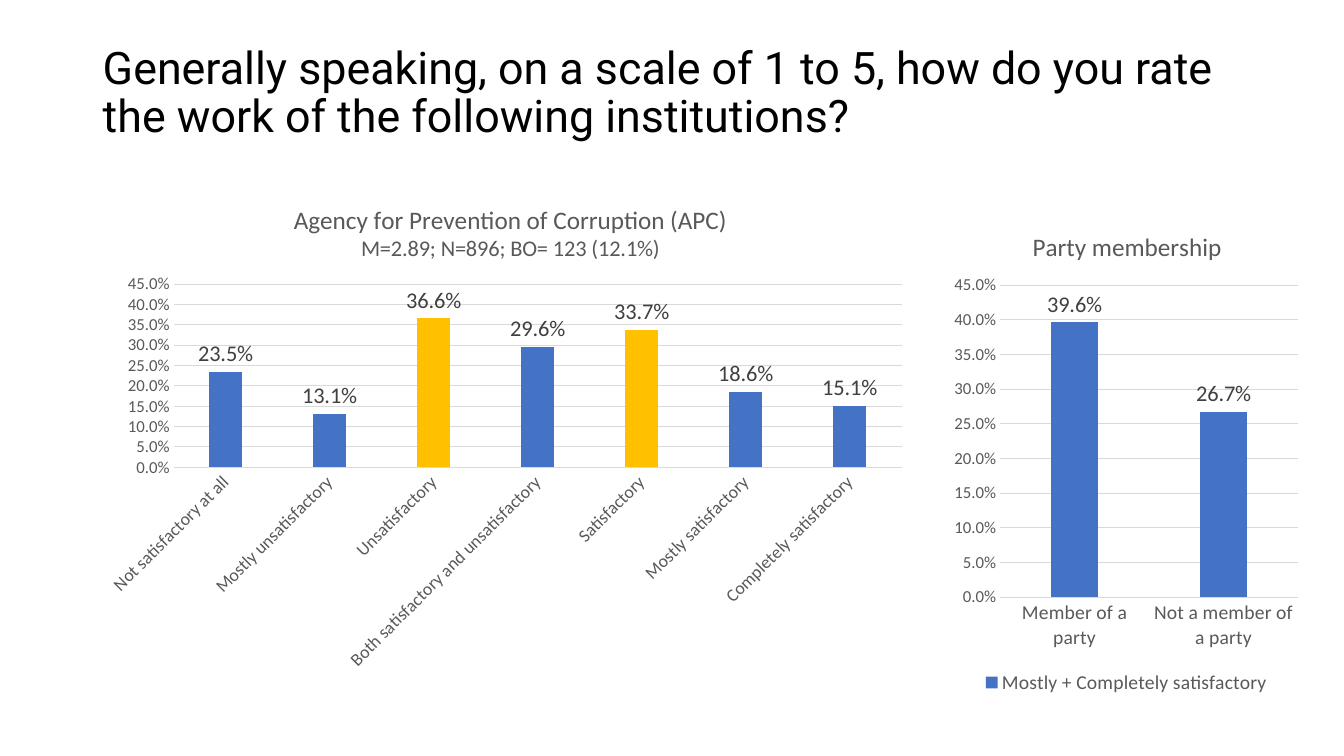
from lxml import etree
from pptx import Presentation
from pptx.chart.data import CategoryChartData
from pptx.dml.color import RGBColor
from pptx.enum.chart import XL_CHART_TYPE, XL_LABEL_POSITION, XL_LEGEND_POSITION, XL_TICK_MARK
from pptx.enum.text import MSO_ANCHOR, MSO_AUTO_SIZE, PP_ALIGN
from pptx.oxml.ns import qn
from pptx.util import Pt

COLUMNS = XL_CHART_TYPE.COLUMN_CLUSTERED
OUTSIDE_END = XL_LABEL_POSITION.OUTSIDE_END
LEGEND_BOTTOM = XL_LEGEND_POSITION.BOTTOM
NO_TICK = XL_TICK_MARK.NONE
LEFT, CENTER = PP_ALIGN.LEFT, PP_ALIGN.CENTER
MIDDLE = MSO_ANCHOR.MIDDLE
NO_AUTOFIT = MSO_AUTO_SIZE.NONE

BLACK = RGBColor(0x00, 0x00, 0x00)
DARK_GRAY = RGBColor(0x40, 0x40, 0x40)
GRAY = RGBColor(0x59, 0x59, 0x59)
LIGHT_GRAY = RGBColor(0xD9, 0xD9, 0xD9)
BLUE = RGBColor(0x44, 0x72, 0xC4)
GOLD = RGBColor(0xFF, 0xC0, 0x00)

QUESTION = ("Generally speaking, on a scale of 1 to 5, how do you rate "
            "the work of the following institutions?")
CHARTS = [
    {
        "title": [("Agency for Prevention of Corruption (APC)", 18),
                  ("M=2.89; N=896; BO= 123 (12.1%)", 16)],
        "series": "Series 1",
        "values": {
            "Not satisfactory at all": 0.235,
            "Mostly unsatisfactory": 0.131,
            "Unsatisfactory": 0.366,
            "Both satisfactory and unsatisfactory": 0.296,
            "Satisfactory": 0.337,
            "Mostly satisfactory": 0.186,
            "Completely satisfactory": 0.151,
        },
        "highlights": ["Unsatisfactory", "Satisfactory"],
        "box": (66.2, 128.9, 589.7, 357.8),
        "title_at": (0.24, 0.04),
        "plot": (0.098, 0.207, 0.882, 0.366),
        "category_size": 12.7,
        "rotation": -45,
        "legend": False,
        "format": "0.0%",
    },
    {
        "title": [("Party membership", 18)],
        "series": "Mostly + Completely satisfactory",
        "values": {"Member of a party": 0.396, "Not a member of a party": 0.267},
        "highlights": [],
        "box": (676.8, 144, 255.6, 355),
        "title_at": (0.225, 0.047),
        "plot": (0.147, 0.168, 0.833, 0.628),
        "category_size": 14,
        "rotation": 0,
        "legend": True,
        "format": "###0.0%",
    },
]


def style_font(font, size, color=GRAY, name="Calibri"):
    font.name = name
    font.size = Pt(size)
    font.bold = False
    font.color.rgb = color


def write_text(paragraph, text, size, color=GRAY, name="Calibri", align=CENTER, spacing=None):
    paragraph.alignment = align
    paragraph.line_spacing = spacing
    run = paragraph.add_run()
    run.text = text
    style_font(run.font, size, color, name)


def place(parent, index, **settings):
    for old in parent.findall(qn("c:layout")):
        parent.remove(old)
    layout = etree.Element(qn("c:layout"))
    manual = etree.SubElement(layout, qn("c:manualLayout"))
    for tag, value in settings.items():
        etree.SubElement(manual, qn(f"c:{tag}")).set("val", str(value))
    parent.insert(index, layout)


def style_axes(chart, content):
    category_axis, value_axis = chart.category_axis, chart.value_axis
    for axis in (category_axis, value_axis):
        axis.major_tick_mark = axis.minor_tick_mark = NO_TICK
    style_font(category_axis.tick_labels.font, content["category_size"])
    category_axis.format.line.color.rgb = LIGHT_GRAY
    category_axis.format.line.width = Pt(0.75)
    if content["rotation"]:
        body = category_axis._element.find(qn("c:txPr")).find(qn("a:bodyPr"))
        body.set("rot", str(content["rotation"] * 60000))
        body.set("vert", "horz")

    value_axis.minimum_scale, value_axis.maximum_scale = 0, 0.45
    value_axis.major_unit = 0.05
    value_axis.format.line.fill.background()
    value_axis.major_gridlines.format.line.color.rgb = LIGHT_GRAY
    value_axis.major_gridlines.format.line.width = Pt(0.75)
    style_font(value_axis.tick_labels.font, 12)
    value_axis.tick_labels.number_format = content["format"]
    value_axis.tick_labels.number_format_is_linked = False


def style_columns(plot, content):
    plot.gap_width, plot.overlap = 219, -27
    plot.vary_by_categories = False
    series = plot.series[0]
    series.invert_if_negative = False
    series.format.fill.solid()
    series.format.fill.fore_color.rgb = BLUE
    for index, category in enumerate(content["values"]):
        if category in content["highlights"]:
            fill = series.points[index].format.fill
            fill.solid()
            fill.fore_color.rgb = GOLD
    labels = series.data_labels
    labels.show_value = True
    labels.position = OUTSIDE_END
    labels.number_format = content["format"]
    labels.number_format_is_linked = False
    style_font(labels.font, 16, DARK_GRAY)


def add_rating_chart(slide, content):
    data = CategoryChartData(number_format=content["format"])
    data.categories = list(content["values"])
    data.add_series(content["series"], list(content["values"].values()))
    box = [Pt(length) for length in content["box"]]
    chart = slide.shapes.add_chart(COLUMNS, *box, data).chart
    style_font(chart.font, 10, BLACK)

    frame = chart.chart_title.text_frame
    for index, (text, size) in enumerate(content["title"]):
        paragraph = frame.add_paragraph() if index else frame.paragraphs[0]
        write_text(paragraph, text, size)
    chart.chart_title.include_in_layout = False
    x, y = content["title_at"]
    place(chart.chart_title._element, 1, xMode="edge", yMode="edge", x=x, y=y)
    x, y, width, height = content["plot"]
    plot_area = chart._chartSpace.find(qn("c:chart")).find(qn("c:plotArea"))
    place(plot_area, 0, layoutTarget="inner", xMode="edge", yMode="edge",
          x=x, y=y, w=width, h=height)

    chart.has_legend = content["legend"]
    if chart.has_legend:
        chart.legend.position = LEGEND_BOTTOM
        chart.legend.include_in_layout = False
        style_font(chart.legend.font, 14)
    style_axes(chart, content)
    style_columns(chart.plots[0], content)


def main():
    presentation = Presentation()
    presentation.slide_width, presentation.slide_height = Pt(960), Pt(540)
    slide = presentation.slides.add_slide(presentation.slide_layouts[5])
    title = slide.shapes.title
    title.left, title.top, title.width, title.height = Pt(66.2), Pt(15.1), Pt(828), Pt(104.4)
    title.text_frame.word_wrap = True
    title.text_frame.auto_size = NO_AUTOFIT
    title.text_frame.vertical_anchor = MIDDLE
    write_text(title.text_frame.paragraphs[0], QUESTION, 32, color=BLACK, name="Roboto",
               align=LEFT, spacing=0.9)
    for content in CHARTS:
        add_rating_chart(slide, content)
    presentation.save("out.pptx")


if __name__ == "__main__":
    main()
